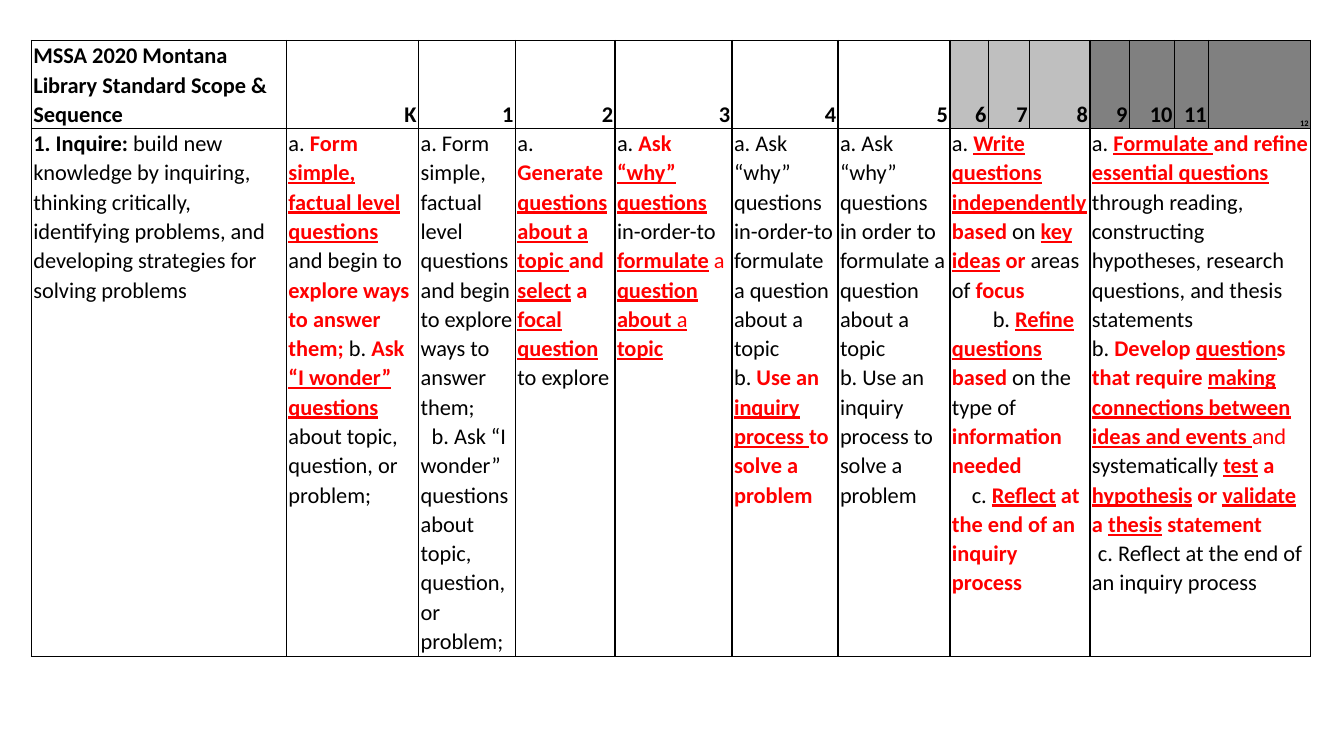
from lxml.etree import SubElement
from pptx import Presentation
from pptx.dml.color import RGBColor
from pptx.enum.text import MSO_ANCHOR, PP_ALIGN
from pptx.oxml.ns import qn
from pptx.util import Cm, Pt

BLACK, RED, WHITE, LIGHT, DARK = "000000", "FF0000", "FFFFFF", "BFBFBF", "808080"

# The first character of a "|" segment picks its look: colour, bold, underline
LOOKS = {
    "*": (RED, True, False),
    "_": (RED, True, True),
    "~": (RED, False, False),
    "=": (RED, False, True),
    "^": (BLACK, True, False),
}
PLAIN = (BLACK, False, False)

COLUMN_WIDTHS = [6.43, 3.33, 2.44, 2.51, 2.95, 2.67, 2.82,
                 0.97, 1.04, 1.52, 0.99, 1.14, 0.86, 2.57]
ROW_HEIGHTS = [2.2, 13.3]
GRADES = ["K"] + [str(grade) for grade in range(1, 13)]
GRADE_FILLS = [WHITE] * 6 + [LIGHT] * 3 + [DARK] * 4
HEADING = "^MSSA 2020 Montana Library Standard Scope & Sequence"

# (first column, last column, [(first-line indent in cm, marked text), ...])
STANDARDS = [
    (0, 0, [(0, "^1. Inquire: |build new knowledge by inquiring, thinking critically, "
                "identifying problems, and developing strategies for solving problems")]),
    (1, 1, [(0, "a. |*Form |_simple, factual level questions |and begin to "
                "|*explore ways to answer them; |b. |*Ask |_“I wonder” questions"
                "| about topic, question, or problem;")]),
    (2, 2, [(0, "a. Form simple, factual level questions and begin to explore ways "
                "to answer them;"),
            (0.28, "b. Ask “I wonder” questions about topic, question, or problem;")]),
    (3, 3, [(0, "a. |*Generate |_questions about a topic |*and |_select|* a "
                "|_focal question |to explore")]),
    (4, 4, [(0, "a. |*Ask |_“why” questions |in-order-to |_formulate|* |~a"
                "|_ question about |=a|_ topic")]),
    (5, 5, [(0, "a. Ask “why” questions in-order-to formulate a question about a topic"),
            (0, "b. |*Use an |_inquiry process |*to solve a problem")]),
    (6, 6, [(0, "a. Ask “why” questions in order to formulate a question about a topic"),
            (0, "b. Use an inquiry process to solve a problem")]),
    (7, 9, [(0, "a. |_Write questions independently |*based |on |_key|* |_ideas|* or "
                "|areas of |*focus"),
            (1.03, "b. |_Refine questions|= |*based |on the type of "
                   "|*information needed"),
            (0.5, "c. |_Reflect|* at the end of an inquiry process")]),
    (10, 13, [(0, "a. |_Formulate |*and refine |_essential questions |through reading, "
                  "constructing hypotheses, research questions, and thesis statements"),
              (0, "b. |*Develop |_question|*s that require "
                  "|_making connections between ideas and events |~and |systematically "
                  "|_test|* a |_hypothesis|* or |_validate|* a |_thesis|* statement"),
              (0.15, "c. Reflect at the end of an inquiry process")]),
]


def colour(hex_code):
    return RGBColor.from_string(hex_code)


def format_cell(cell, fill):
    """Margins, thin black borders and fill."""
    margins = {"margin_left": Cm(0.05), "margin_right": Cm(0.05),
               "margin_top": 0, "margin_bottom": 0}
    for name, value in margins.items():
        setattr(cell, name, value)
    properties = cell._tc.get_or_add_tcPr()
    for side in ("a:lnL", "a:lnR", "a:lnT", "a:lnB"):
        border = SubElement(properties, qn(side), w=str(Pt(1)))
        ink = SubElement(border, qn("a:solidFill"))
        SubElement(ink, qn("a:srgbClr"), val=BLACK)
    cell.fill.solid()
    cell.fill.fore_color.rgb = colour(fill)


def write_runs(paragraph, marked, size):
    paragraph.line_spacing = 1.07
    for segment in marked.split("|"):
        look = LOOKS.get(segment[0])
        ink, bold, underline = look or PLAIN
        run = paragraph.add_run()
        run.text = segment[1:] if look else segment
        formats = {"name": "Calibri", "size": Pt(size), "bold": bold,
                   "underline": underline}
        for name, value in formats.items():
            setattr(run.font, name, value)
        run.font.color.rgb = colour(ink)


def fill_header_row(table):
    write_runs(table.cell(0, 0).text_frame.paragraphs[0], HEADING, 16)
    for column, grade in enumerate(GRADES, start=1):
        cell = table.cell(0, column)
        cell.vertical_anchor = MSO_ANCHOR.BOTTOM
        label = cell.text_frame.paragraphs[0]
        label.alignment = PP_ALIGN.RIGHT
        write_runs(label, "^" + grade, 6 if grade == "12" else 16)


def fill_standard_row(table):
    for first, last, items in STANDARDS:
        cell = table.cell(1, first)
        if last > first:
            cell.merge(table.cell(1, last))
        frame = cell.text_frame
        for index, (indent, marked) in enumerate(items):
            item = frame.add_paragraph() if index else frame.paragraphs[0]
            if indent:
                item._p.get_or_add_pPr().set("indent", str(Cm(indent)))
            write_runs(item, marked, 16)


def add_scope_table(slide, left, top):
    """Scope and sequence grid with its top left corner at the given place."""
    table = slide.shapes.add_table(
        len(ROW_HEIGHTS), len(COLUMN_WIDTHS), Cm(left), Cm(top),
        Cm(sum(COLUMN_WIDTHS)), Cm(sum(ROW_HEIGHTS))).table
    table.first_row = table.horz_banding = False
    for column, width in zip(table.columns, COLUMN_WIDTHS):
        column.width = Cm(width)
    fills = [[WHITE] + GRADE_FILLS, [WHITE] * len(COLUMN_WIDTHS)]
    for row, height, row_fills in zip(table.rows, ROW_HEIGHTS, fills):
        row.height = Cm(height)
        for cell, fill in zip(row.cells, row_fills):
            format_cell(cell, fill)
    fill_header_row(table)
    fill_standard_row(table)


def main():
    deck = Presentation()
    deck.slide_width, deck.slide_height = Cm(33.87), Cm(19.05)
    slide = deck.slides.add_slide(deck.slide_layouts[6])
    add_scope_table(slide, 0.79, 1.02)
    deck.save("out.pptx")


if __name__ == "__main__":
    main()
